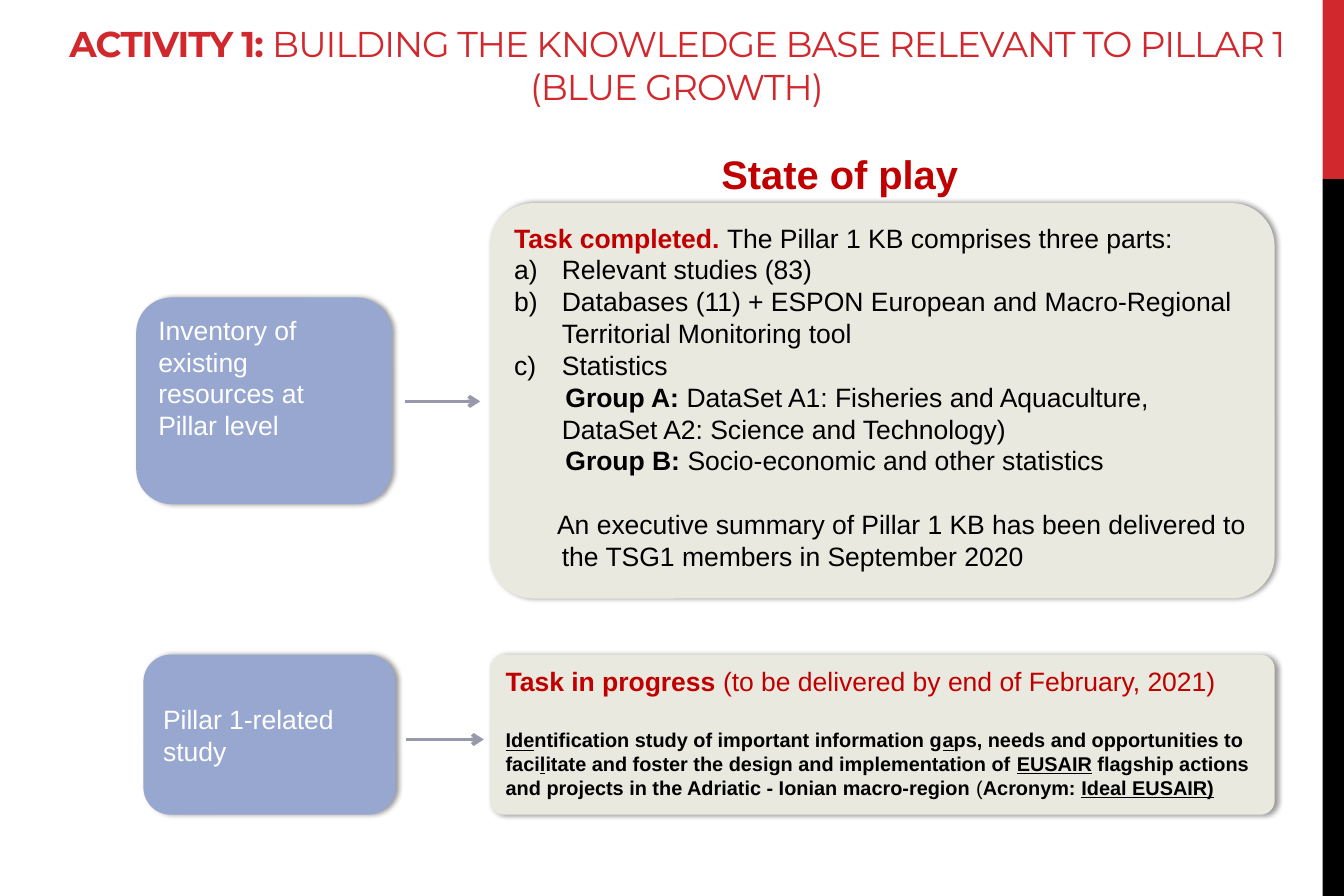
from lxml.etree import SubElement
from pptx import Presentation
from pptx.dml.color import RGBColor
from pptx.enum.shapes import MSO_CONNECTOR, MSO_SHAPE
from pptx.enum.text import MSO_ANCHOR, MSO_AUTO_SIZE, PP_ALIGN
from pptx.oxml.ns import qn
from pptx.util import Inches, Pt

COLORS = {
    "title": "D1282E",
    "heading": "C00000",
    "blue": "97A7D0",
    "beige": "E9E9E0",
    "arrow": "989AAC",
    "black": "000000",
    "white": "FFFFFF",
}
BLANK_LINE = 19  # points between separated paragraphs


def rgb(name):
    return RGBColor.from_string(COLORS[name])


def next_paragraph(frame):
    first = frame.paragraphs[0]
    return frame.add_paragraph() if first.runs else first


def write(frame, runs, size=16, color="black", font_name="Arial", bold=False,
          align=PP_ALIGN.LEFT, gap=0, hanging=None, lettered=False):
    """Add a paragraph of (text, style) runs; style letters: b bold, n not bold, u underlined, h heading colour."""
    paragraph = next_paragraph(frame)
    properties = paragraph._p.get_or_add_pPr()
    if hanging is not None:
        properties.set("marL", str(Inches(0.4)))
        properties.set("indent", str(Inches(hanging)))
    if lettered:
        SubElement(properties, qn("a:buAutoNum"), type="alphaLcParenR")
    paragraph.alignment = align
    paragraph.space_before = Pt(gap)
    font = paragraph.font
    font.name, font.size, font.bold = font_name, Pt(size), bold
    font.color.rgb = rgb(color)
    for text, style in runs:
        run = paragraph.add_run()
        run.text = text
        if "b" in style or "n" in style:
            run.font.bold = "b" in style
        if "u" in style:
            run.font.underline = True
        if "h" in style:
            run.font.color.rgb = rgb("heading")
    return paragraph


def add_block(slide, kind, left, top, width, height, color):
    shape = slide.shapes.add_shape(
        kind, Inches(left), Inches(top), Inches(width), Inches(height))
    shape.shadow.inherit = False
    shape.fill.solid()
    shape.fill.fore_color.rgb = rgb(color)
    shape.line.fill.background()
    return shape


def add_card(slide, left, top, width, height, color, rounding, anchor=MSO_ANCHOR.TOP):
    """Add a rounded box with a soft shadow and return its text frame."""
    card = add_block(slide, MSO_SHAPE.ROUNDED_RECTANGLE, left, top, width, height, color)
    card.adjustments[0] = rounding
    effects = card._element.spPr.find(qn("a:effectLst"))
    shadow = SubElement(effects, qn("a:outerShdw"), blurRad=str(Pt(3.1)),
                        dist=str(Pt(1.8)), dir="0", rotWithShape="0")
    shade = SubElement(shadow, qn("a:srgbClr"), val=COLORS["black"])
    SubElement(shade, qn("a:alpha"), val="40000")
    card.text_frame.word_wrap = True
    card.text_frame.vertical_anchor = anchor
    return card.text_frame


def add_arrow(slide, start, end, y):
    arrow = slide.shapes.add_connector(
        MSO_CONNECTOR.STRAIGHT, Inches(start), Inches(y), Inches(end), Inches(y))
    arrow.line.color.rgb = rgb("arrow")
    arrow.line.width = Pt(2.25)
    SubElement(arrow.line._get_or_add_ln(), qn("a:tailEnd"), type="arrow")
    SubElement(arrow._element.spPr, qn("a:effectLst"))


def set_title(slide):
    title = slide.shapes.title
    title.left, title.top = Inches(0.27), Inches(0.21)
    title.width, title.height = Inches(10.79), Inches(0.74)
    frame = title.text_frame
    frame.word_wrap = True
    frame.auto_size = MSO_AUTO_SIZE.NONE
    frame.vertical_anchor = MSO_ANCHOR.BOTTOM
    paragraph = write(frame, [
        ("ACTIVITY 1:", "b"),
        (" BUILDING THE KNOWLEDGE BASE RELEVANT TO PILLAR 1 (BLUE GROWTH)", ""),
    ], 21.6, "title", "Montserrat", align=PP_ALIGN.CENTER)
    for run in paragraph.runs:
        run._r.get_or_add_rPr().set("spc", "-60")


def add_heading(slide):
    box = slide.shapes.add_textbox(Inches(5.94), Inches(1.2), Inches(2.2), Inches(0.51))
    box.text_frame.word_wrap = False
    write(box.text_frame, [("State of play", "")], 24, "heading", bold=True)


def add_inventory_row(slide):
    label = add_card(slide, 1.14, 2.49, 2.14, 1.73, "blue", 0.171)
    write(label, [("Inventory of existing resources at Pillar level", "")], color="white")
    add_arrow(slide, 3.39, 4.02, 3.36)

    status = add_card(slide, 4.1, 1.7, 6.57, 3.31, "beige", 0.109)
    write(status, [("Task completed. ", "bh"),
                   ("The Pillar 1 KB comprises three parts:", "")], hanging=-0.4)
    for part in (
        "Relevant studies (83)",
        "Databases (11) + ESPON European and Macro-Regional Territorial Monitoring tool",
        "Statistics",
    ):
        write(status, [(part, "")], hanging=-0.4, lettered=True)
    for group, content in (
        ("Group A:", " DataSet A1: Fisheries and Aquaculture, DataSet A2: Science and Technology)"),
        ("Group B:", " Socio-economic and other statistics"),
    ):
        write(status, [(group, "b"), (content, "")], hanging=0.03)
    write(status, [("An executive summary of Pillar 1 KB has been delivered to "
                    "the TSG1 members in September 2020", "")],
          gap=BLANK_LINE, hanging=-0.04)


def add_study_row(slide):
    label = add_card(slide, 1.2, 5.48, 2.11, 1.34, "blue", 0.171, MSO_ANCHOR.MIDDLE)
    write(label, [("Pillar 1-related study", "")], color="white")
    add_arrow(slide, 3.4, 4.05, 6.19)

    status = add_card(slide, 4.1, 5.48, 6.57, 1.34, "beige", 0.089)
    write(status, [("Task in progress ", "b"),
                   ("(to be delivered by end of February, 2021)", "")], color="heading")
    write(status, [
        ("Ide", "u"),
        ("ntification study of important information g", ""),
        ("a", "u"),
        ("ps, needs and opportunities to faci", ""),
        ("l", "u"),
        ("itate and foster the design and implementation of ", ""),
        ("EUSAIR", "u"),
        (" flagship actions and projects in the Adriatic - Ionian macro-region ", ""),
        ("(", "n"),
        ("Acronym: ", ""),
        ("Ideal EUSAIR)", "u"),
    ], 12, bold=True, gap=BLANK_LINE)


def main():
    presentation = Presentation()
    presentation.slide_width, presentation.slide_height = Inches(11.25), Inches(7.5)
    slide = presentation.slides.add_slide(presentation.slide_layouts.get_by_name("Title Only"))
    add_block(slide, MSO_SHAPE.RECTANGLE, 11.07, 0, 0.18, 1.5, "title")
    add_block(slide, MSO_SHAPE.RECTANGLE, 11.07, 1.5, 0.18, 6, "black")
    set_title(slide)
    add_study_row(slide)
    add_inventory_row(slide)
    add_heading(slide)
    presentation.save("out.pptx")


if __name__ == "__main__":
    main()
